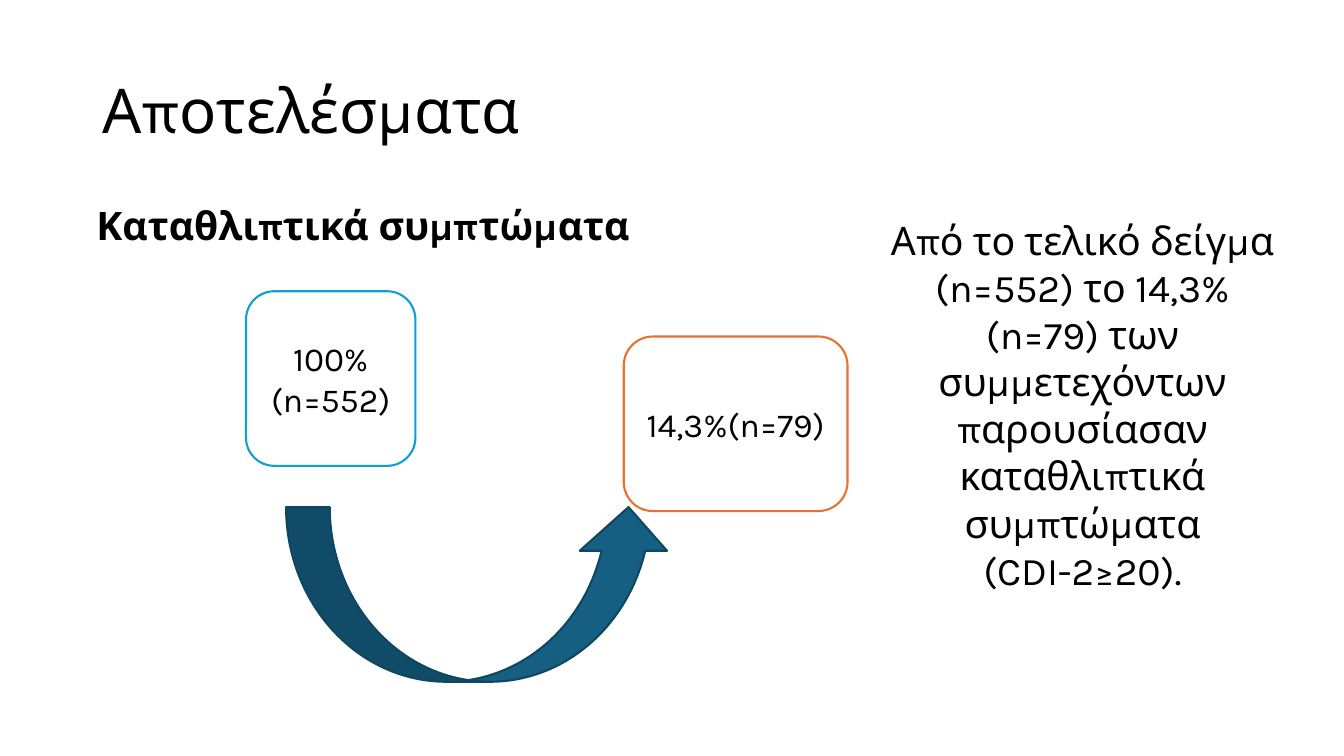
from dataclasses import dataclass
from pptx import Presentation
from pptx.dml.color import RGBColor as Rgb
from pptx.enum.shapes import MSO_SHAPE as Kind
from pptx.enum.text import MSO_ANCHOR as Anchor, PP_ALIGN as Align
from pptx.util import Cm, Pt


@dataclass
class Theme:
    font: str = "Karla"
    ink: str = "000000"
    paper: str = "FFFFFF"
    blue: str = "0F9ED5"
    orange: str = "E97132"
    teal: str = "156082"
    edge: str = "104760"
    title: int = 44
    body: int = 28
    label: int = 24


theme = Theme()


def write(shape, text, size, align=Align.LEFT, anchor=Anchor.TOP, bold=False, space=1.0):
    frame = shape.text_frame
    frame.word_wrap = True
    frame.vertical_anchor = anchor
    para = frame.paragraphs[0]
    para.alignment = align
    para.line_spacing = space
    run = para.add_run()
    run.text = text
    run.font.name = theme.font
    run.font.size = Pt(size)
    run.font.bold = bold
    run.font.color.rgb = Rgb.from_string(theme.ink)


def draw(kind, box, fill, line):
    shape = slide.shapes.add_shape(kind, *map(Cm, box))
    shape.shadow.inherit = False
    shape.fill.solid()
    shape.fill.fore_color.rgb = Rgb.from_string(fill)
    shape.line.color.rgb = Rgb.from_string(line)
    shape.line.width = Pt(1.5)
    return shape


# Slide
deck = Presentation()
deck.slide_width, deck.slide_height = Cm(33.87), Cm(19.05)
slide = deck.slides.add_slide(deck.slide_layouts[6])

# Title and subtitle
title = slide.shapes.add_textbox(Cm(2.33), Cm(1.01), Cm(29.21), Cm(3.68))
write(title, "Αποτελέσματα", theme.title, anchor=Anchor.MIDDLE, space=0.9)
topic = slide.shapes.add_textbox(Cm(2.18), Cm(5.08), Cm(29.21), Cm(12.09))
write(topic, "Καταθλιπτικά συμπτώματα", theme.body, bold=True, space=0.9)
topic.text_frame.paragraphs[0].space_before = Pt(10)

# Share of the sample
groups = [
    ("14,3%(n=79)", (15.72, 8.48, 5.64, 4.4), theme.orange),
    ("100% (n=552)", (6.2, 7.34, 4.27, 4.4), theme.blue),
]
for text, box, line in groups:
    card = draw(Kind.ROUNDED_RECTANGLE, box, theme.paper, line)
    write(card, text, theme.label, Align.CENTER, Anchor.MIDDLE)

# Arrow from the sample to the share
draw(Kind.CURVED_UP_ARROW, (7.21, 12.78, 9.73, 4.4), theme.teal, theme.edge)

# Finding
note = slide.shapes.add_textbox(Cm(21.97), Cm(5.33), Cm(10.62), Cm(7.44))
write(
    note,
    "Από το τελικό δείγμα (n=552) το 14,3% (n=79) των συμμετεχόντων "
    "παρουσίασαν καταθλιπτικά συμπτώματα (CDI-2≥20).",
    theme.body,
    Align.CENTER,
)

deck.save("out.pptx")
